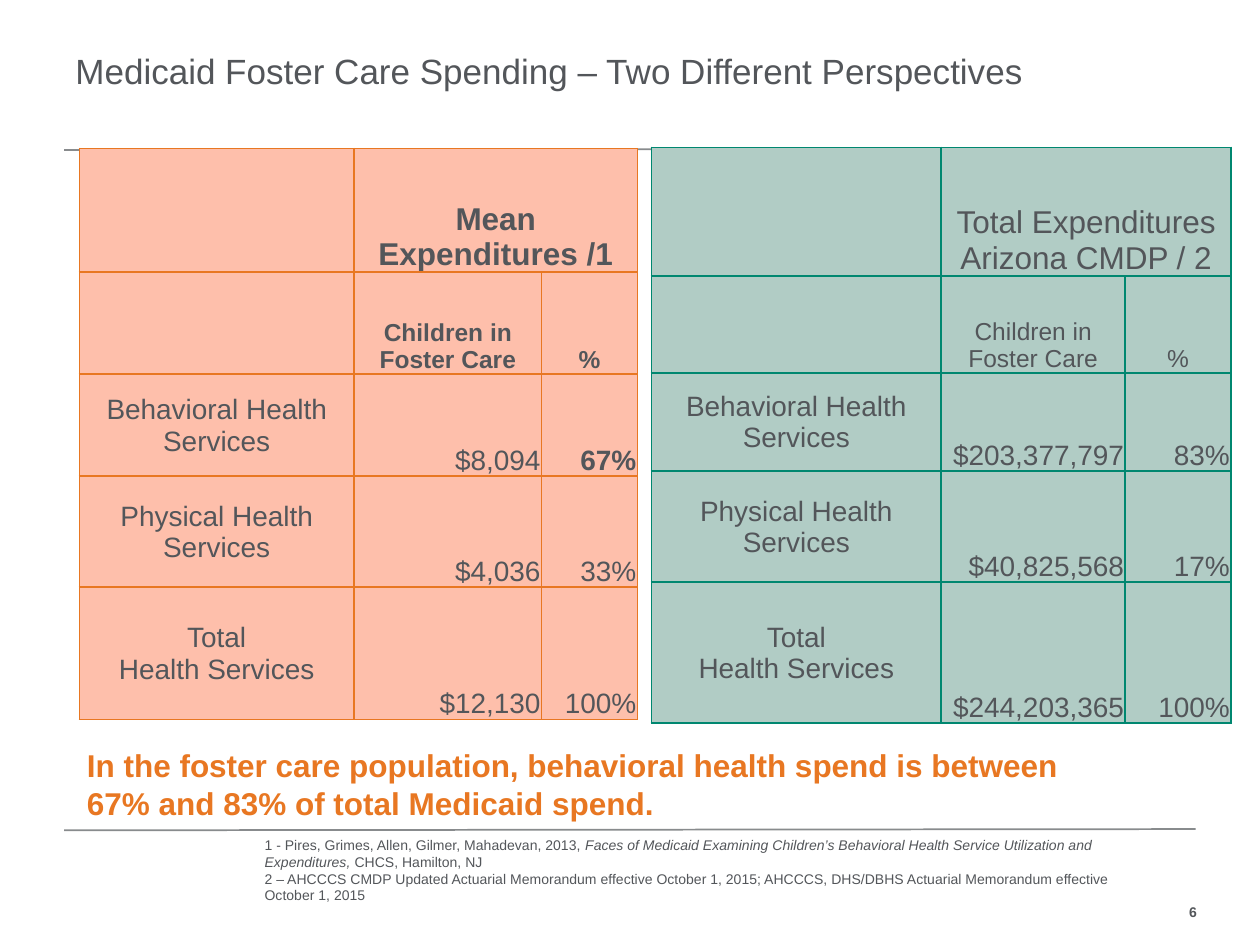
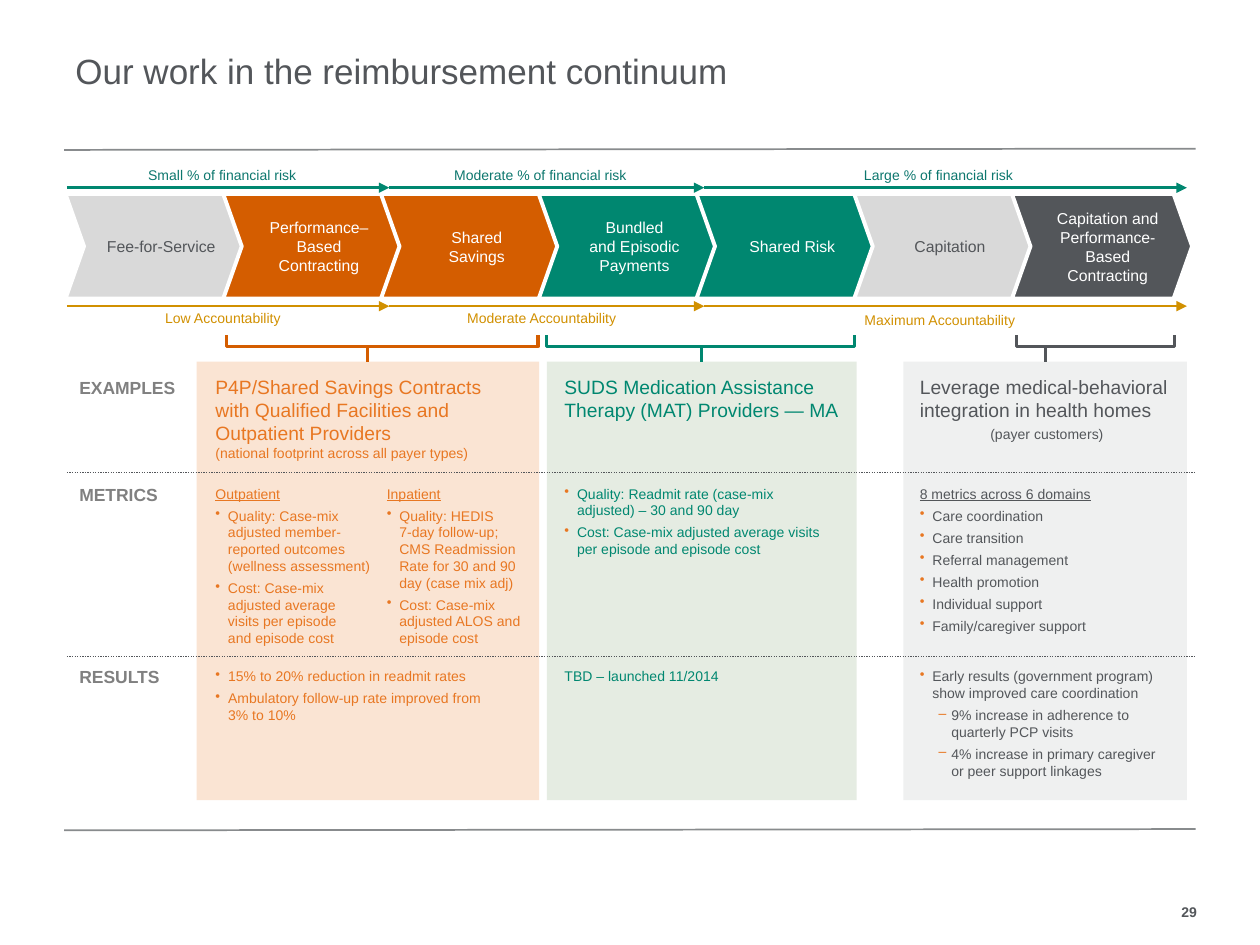
from lxml import etree
from pptx import Presentation
from pptx.dml.color import RGBColor
from pptx.enum.dml import MSO_LINE
from pptx.enum.shapes import MSO_CONNECTOR, MSO_SHAPE
from pptx.enum.text import MSO_ANCHOR as ANCHOR, PP_ALIGN as ALIGN
from pptx.oxml.ns import qn
from pptx.util import Inches, Pt

FONT = "Arial"
COLORS = {
    "text": "53565A", "rule": "888B8D", "label": "808080", "white": "FFFFFF",
    "orange": "E87722", "rust": "D45D00", "green": "008770", "teal": "0D776E",
    "gold": "D19000", "silver": "D9D9D9", "peach_cell": "FEBFAB", "green_cell": "B1CCC5",
    "peach": "FAE4D3", "mint": "E5ECE2", "mist": "EFF0F0",
}


def bullets(*items, mark="•", level=0):
    return [dict(text=t, mark=mark, level=level, after=3) for t in items]


def heading(text):
    return dict(text=text, underline=True, after=3)


# Slide 1: spending tables
SPENDING_TITLE = "Medicaid Foster Care Spending – Two Different Perspectives"
SERVICES = ["Behavioral Health\nServices", "Physical Health\nServices", "Total\nHealth Services"]
SPENDING_TABLES = [
    dict(at=(0.63, 1.18), cols=[2.18, 1.49, 0.76], rows=[0.98, 0.81, 0.81, 0.88, 1.05],
         fill="peach_cell", border="orange", bold_head=True, bold_values=["67%"],
         head="Mean Expenditures /1",
         values=[("$8,094", "67%"), ("$4,036", "33%"), ("$12,130", "100%")]),
    dict(at=(5.17, 1.17), cols=[2.3, 1.46, 0.84], rows=[1.02, 0.77, 0.78, 0.88, 1.12],
         fill="green_cell", border="green", bold_head=False, bold_values=[],
         head="Total Expenditures Arizona CMDP / 2",
         values=[("$203,377,797", "83%"), ("$40,825,568", "17%"), ("$244,203,365", "100%")]),
]
TAKEAWAY = ["In the foster care population, behavioral health spend is between",
            "67% and 83% of total Medicaid spend."]
SOURCES = [
    dict(text=[
        ("1 - Pires, Grimes, Allen, Gilmer, Mahadevan, 2013, ", False),
        ("Faces of Medicaid Examining Children’s Behavioral Health Service Utilization "
         "and Expenditures, ", True),
        ("CHCS, Hamilton, NJ", False)]),
    "2 – AHCCCS CMDP Updated Actuarial Memorandum effective October 1, 2015; AHCCCS, "
    "DHS/DBHS Actuarial Memorandum effective October 1, 2015",
]

# Slide 2: reimbursement continuum
CONTINUUM_TITLE = "Our work in the reimbursement continuum"
STEPS = [  # text, fill, font colour
    ("Fee-for-Service", "silver", "text"),
    ("Performance–Based\nContracting", "rust", "white"),
    ("Shared\nSavings", "rust", "white"),
    ("Bundled\nand Episodic\nPayments", "green", "white"),
    ("Shared Risk", "green", "white"),
    ("Capitation", "silver", "text"),
    ("Capitation and\nPerformance-\nBased\nContracting", "text", "white"),
]
ARROW_STOPS = [0.53, 3.09, 5.59, 9.42]
SCALES = [  # arrow y, arrow colour, text colour, labels as (text, left, top, width)
    (1.49, "green", "teal", [("Small % of financial risk", 0.53, 1.27, 2.47),
                             ("Moderate % of financial risk", 3.07, 1.27, 2.44),
                             ("Large % of financial risk", 5.57, 1.27, 3.76)]),
    (2.43, "gold", "gold", [("Low Accountability", 0.53, 2.41, 2.48),
                            ("Moderate Accountability", 3.09, 2.41, 2.42),
                            ("Maximum Accountability", 5.59, 2.42, 3.74)]),
]
ROW_LABELS = [("EXAMPLES", 2.94), ("METRICS", 3.79), ("RESULTS", 5.24)]
ROW_DIVIDERS = [3.75, 5.21]
EXAMPLES_TOP, METRICS_TOP, RESULTS_TOP = 2.93, 3.85, 5.3
PROGRAMS = [  # card and bracket are (left, right); texts are (left, width, paragraphs)
    dict(card=(1.56, 4.28), fill="peach", bracket=(1.8, 4.27), line="rust", color="orange",
         example=(1.71, 2.47, [
             "P4P/Shared Savings Contracts with Qualified Facilities and Outpatient Providers",
             dict(text="(national footprint across all payer types)", size=8)]),
         metrics=[
             (1.71, 1.37, [heading("Outpatient")] + bullets(
                 "Quality: Case-mix adjusted member-reported outcomes (wellness assessment)",
                 "Cost: Case-mix adjusted average\nvisits per episode\nand episode cost")),
             (3.07, 1.17, [heading("Inpatient")] + bullets(
                 "Quality: HEDIS\n7-day follow-up; CMS Readmission Rate for 30 and 90 day "
                 "(case mix adj)",
                 "Cost: Case-mix adjusted ALOS and episode cost"))],
         results=(1.71, 2.31, bullets("15% to 20% reduction in readmit rates",
                                      "Ambulatory follow-up rate improved from 3% to 10%"))),
    dict(card=(4.34, 6.8), fill="mint", bracket=(4.34, 6.78), line="green", color="green",
         example=(4.48, 2.43, ["SUDS Medication Assistance Therapy (MAT) Providers — MA"]),
         metrics=[(4.48, 2.21, bullets(
             "Quality: Readmit rate (case-mix adjusted) – 30 and 90 day",
             "Cost: Case-mix adjusted average visits per episode and episode cost"))],
         results=(4.48, 2.08, ["TBD – launched 11/2014"])),
    dict(card=(7.17, 9.42), fill="mist", bracket=(8.07, 9.32), line="text", color="text",
         example=(7.3, 2.29, [
             "Leverage medical-behavioral integration in health homes",
             dict(text="(payer customers)", size=8, indent=0.56, before=2.5)]),
         metrics=[(7.3, 2.09, [heading("8 metrics across 6 domains")] + bullets(
             "Care coordination", "Care transition", "Referral management",
             "Health promotion", "Individual support", "Family/caregiver support"))],
         results=(7.3, 2.17, bullets(
             "Early results (government program) show improved care coordination")
             + bullets("9% increase in adherence to quarterly PCP visits",
                       "4% increase in primary caregiver\nor peer support linkages",
                       mark="–", level=1))),
]


def rgb(name):
    return RGBColor.from_string(COLORS[name])


def add_bullet(p, mark, level):
    p.level = level
    pPr = p._p.get_or_add_pPr()
    pPr.set("marL", str(Inches(0.25 if level else 0.1)))
    pPr.set("indent", str(Inches(-0.1)))
    clr = etree.SubElement(pPr, qn("a:buClr"))
    etree.SubElement(clr, qn("a:srgbClr"), val=COLORS["orange"])
    etree.SubElement(pPr, qn("a:buChar"), char=mark)


def write(tf, paragraphs, size=8, color="text", bold=False, align=ALIGN.LEFT,
          anchor=ANCHOR.TOP, margins=(0, 0, 0, 0), spacing=None):
    """Fill a text frame; a paragraph is a string or a dict of text and its own format."""
    tf.word_wrap = True
    tf.vertical_anchor = anchor
    tf.margin_left, tf.margin_top, tf.margin_right, tf.margin_bottom = map(Inches, margins)
    for i, item in enumerate(paragraphs):
        fmt = item if isinstance(item, dict) else dict(text=item)
        p = tf.paragraphs[0] if i == 0 else tf.add_paragraph()
        p.alignment = align
        if spacing:
            p.line_spacing = spacing
        if "before" in fmt:
            p.space_before = Pt(fmt["before"])
        if "after" in fmt:
            p.space_after = Pt(fmt["after"])
        if "mark" in fmt:
            add_bullet(p, fmt["mark"], fmt["level"])
        if "indent" in fmt:
            p._p.get_or_add_pPr().set("marL", str(Inches(fmt["indent"])))
        runs = fmt["text"] if isinstance(fmt["text"], list) else [(fmt["text"], False)]
        for text, italic in runs:
            for n, line in enumerate(text.split("\n")):
                if n:
                    p.add_line_break()
                r = p.add_run()
                r.text = line
                r.font.name = FONT
                r.font.size = Pt(fmt.get("size", size))
                r.font.bold = bold
                r.font.italic = italic
                r.font.underline = fmt.get("underline", False)
                r.font.color.rgb = rgb(color)


def add_text(s, at, paragraphs, **fmt):
    write(s.shapes.add_textbox(*map(Inches, at)).text_frame, paragraphs, **fmt)


def add_shape(s, kind, at, fill, line=None, width=1):
    sp = s.shapes.add_shape(kind, *map(Inches, at))
    sp.shadow.inherit = False
    sp.fill.solid()
    sp.fill.fore_color.rgb = rgb(fill)
    if line:
        sp.line.color.rgb = rgb(line)
        sp.line.width = Pt(width)
    else:
        sp.line.fill.background()
    return sp


def add_line(s, start, end, color, width, dotted=False, arrow=False):
    c = s.shapes.add_connector(MSO_CONNECTOR.STRAIGHT, *map(Inches, start + end))
    c.line.color.rgb = rgb(color)
    c.line.width = Pt(width)
    if dotted:
        c.line.dash_style = MSO_LINE.ROUND_DOT
    if arrow:
        etree.SubElement(c.line._get_or_add_ln(), qn("a:tailEnd"), type="triangle")
    etree.SubElement(c._element.spPr, qn("a:effectLst"))
    return c


def new_slide(prs, title, number):
    s = prs.slides.add_slide(prs.slide_layouts[6])
    for y in (1.19, 6.59):
        add_line(s, (0.51, y), (9.49, y - 0.01), "rule", 1)
    add_text(s, (0.5, 0.3, 9, 0.48), [title], size=20, anchor=ANCHOR.BOTTOM,
             margins=(0.1, 0.05, 0.1, 0.05), spacing=0.9)
    add_text(s, (9, 7.12, 0.5, 0.23), [str(number)], bold=True,
             align=ALIGN.RIGHT, anchor=ANCHOR.MIDDLE)
    return s


def style_cell(cell, fill, border):
    cell.fill.solid()
    cell.fill.fore_color.rgb = rgb(fill)
    tcPr = cell._tc.get_or_add_tcPr()
    for i, side in enumerate(("lnL", "lnR", "lnT", "lnB")):
        ln = etree.Element(qn(f"a:{side}"), w=str(Pt(1)))
        solid = etree.SubElement(ln, qn("a:solidFill"))
        etree.SubElement(solid, qn("a:srgbClr"), val=COLORS[border])
        tcPr.insert(i, ln)


def write_cell(cell, text, anchor=ANCHOR.BOTTOM, **fmt):
    write(cell.text_frame, text.split("\n"), **fmt)
    cell.vertical_anchor = anchor
    cell.margin_left = cell.margin_right = cell.margin_top = Inches(0.01)
    cell.margin_bottom = 0


def add_spending_table(s, spec):
    cols, rows = spec["cols"], spec["rows"]
    frame = s.shapes.add_table(len(rows), len(cols), *map(Inches, spec["at"]),
                               Inches(sum(cols)), Inches(sum(rows)))
    table = frame.table
    for col, width in zip(table.columns, cols):
        col.width = Inches(width)
    for row, height in zip(table.rows, rows):
        row.height = Inches(height)
    for cell in table.iter_cells():
        style_cell(cell, spec["fill"], spec["border"])
    table.cell(0, 1).merge(table.cell(0, 2))
    head = dict(bold=spec["bold_head"], align=ALIGN.CENTER)
    write_cell(table.cell(0, 1), spec["head"], size=18, **head)
    for c, text in enumerate(("Children in Foster Care", "%"), 1):
        write_cell(table.cell(1, c), text, size=14, **head)
    for r, (service, values) in enumerate(zip(SERVICES, spec["values"]), 2):
        write_cell(table.cell(r, 0), service, anchor=ANCHOR.MIDDLE, size=16, align=ALIGN.CENTER)
        for c, value in enumerate(values, 1):
            write_cell(table.cell(r, c), value, size=16, align=ALIGN.RIGHT,
                       bold=value in spec["bold_values"])


def add_program(s, prog):
    """Draw a card with its bracket, stem and three rows of text."""
    left, right = prog["card"]
    card = add_shape(s, MSO_SHAPE.RECTANGLE, (left, 2.87, right - left, 3.48), prog["fill"])
    x1, x2 = prog["bracket"]
    pen = s.shapes.build_freeform(Inches(x1), Inches(2.66))
    pen.add_line_segments([(Inches(x), Inches(y)) for x, y in
                           ((x1, 2.75), (x2, 2.75), (x2, 2.66))], close=False)
    bracket = pen.convert_to_shape()
    bracket.shadow.inherit = False
    bracket.fill.background()
    bracket.line.color.rgb = rgb(prog["line"])
    bracket.line.width = Pt(1.75)
    middle = (left + right) / 2
    add_line(s, (middle, 2.75), (middle, 2.87), prog["line"], 1.75).end_connect(card, 0)

    x, width, paragraphs = prog["example"]
    add_text(s, (x, EXAMPLES_TOP, width, 0.79), paragraphs, size=11, color=prog["color"],
             margins=(0, 0.05, 0.1, 0.05))
    blocks = [(METRICS_TOP, 1.3, m) for m in prog["metrics"]]
    blocks.append((RESULTS_TOP, 0.94, prog["results"]))
    for top, height, (x, width, paragraphs) in blocks:
        add_text(s, (x, top, width, height), paragraphs, color=prog["color"],
                 margins=(0, 0, 0.1, 0))


def build_spending(prs):
    s = new_slide(prs, SPENDING_TITLE, 6)
    for spec in SPENDING_TABLES:
        add_spending_table(s, spec)
    add_text(s, (0.69, 5.92, 8.96, 0.72), TAKEAWAY, size=18, color="orange", bold=True)
    add_text(s, (2.1, 6.64, 7.01, 0.47), SOURCES)


def build_continuum(prs):
    s = new_slide(prs, CONTINUUM_TITLE, 29)
    for prog in PROGRAMS:
        add_program(s, prog)
    for i, (text, fill, color) in enumerate(STEPS):
        step = add_shape(s, MSO_SHAPE.CHEVRON, (0.52 + i * 1.252, 1.54, 1.43, 0.83),
                         fill, "white", 2.25)
        step.adjustments[0] = 0.177
        write(step.text_frame, [text], size=9, color=color, align=ALIGN.CENTER,
              anchor=ANCHOR.MIDDLE, margins=(0.09, 0.05, 0, 0.05))
    for y, line, color, labels in SCALES:
        for start, end in zip(ARROW_STOPS, ARROW_STOPS[1:]):
            add_line(s, (start, y), (end, y), line, 1.5, arrow=True)
        for text, x, top, width in labels:
            add_text(s, (x, top, width, 0.24), [text], color=color, align=ALIGN.CENTER,
                     margins=(0, 0.05, 0, 0.05))
    for text, top in ROW_LABELS:
        add_text(s, (0.63, top, 0.9, 0.27), [text], size=10, color="label", bold=True,
                 margins=(0, 0.05, 0, 0.05))
    for y in ROW_DIVIDERS:
        add_line(s, (0.53, y), (9.48, y), "text", 0.75, dotted=True)


def main():
    prs = Presentation()
    prs.slide_width, prs.slide_height = Inches(10), Inches(7.5)
    build_spending(prs)
    build_continuum(prs)
    prs.save("out.pptx")


if __name__ == "__main__":
    main()
